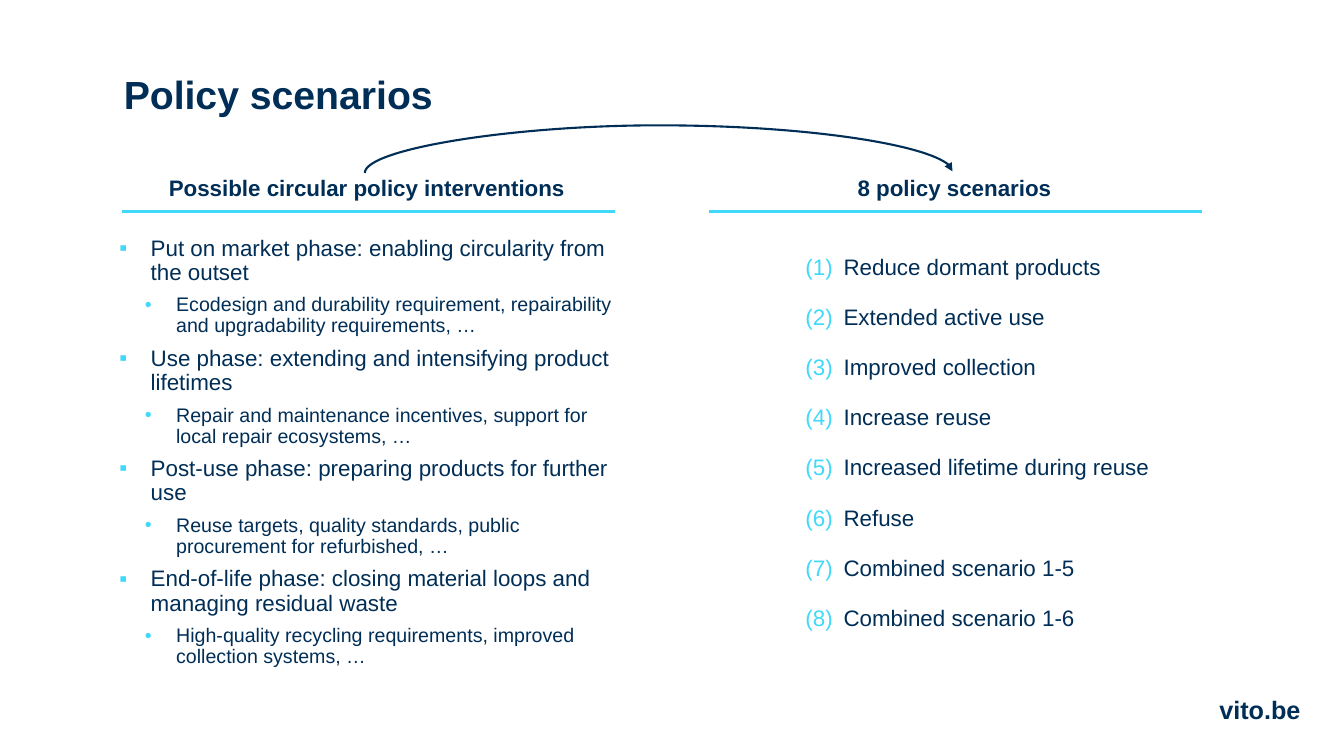
from dataclasses import dataclass

from lxml import etree
from pptx import Presentation
from pptx import util as u
from pptx.dml.color import RGBColor
from pptx.enum import shapes, text
from pptx.oxml.ns import qn


@dataclass(frozen=True)
class Theme:
    font: str = "Arial"
    navy: str = "002E56"
    cyan: str = "41D9F9"
    title: int = 28
    footer: int = 18
    body: int = 16
    detail: int = 14
    rule: float = 1.5
    gap: int = 7
    tight: float = 0.9
    airy: float = 1.5


def add_child(parent, tag, **attributes):
    return etree.SubElement(parent, qn(tag), attributes)


class SlideBuilder:
    def __init__(self, slide, theme):
        self.slide = slide
        self.theme = theme

    def text_box(self, left, top, width, height, anchor=text.MSO_ANCHOR.TOP):
        box = self.slide.shapes.add_textbox(*map(u.Cm, (left, top, width, height)))
        frame = box.text_frame
        frame.word_wrap = True
        frame.vertical_anchor = anchor
        return frame

    def paragraph(self, frame, wording, size, bold=False, spacing=None,
                  centred=False, bullet=None, margin=0, hanging=0):
        """Add one paragraph; bullet is a (tag, attributes) pair."""
        first = not frame.paragraphs[0].runs
        line = frame.paragraphs[0] if first else frame.add_paragraph()
        props = line._p.get_or_add_pPr()
        props.set("marL", str(u.Cm(margin)))
        props.set("indent", str(-u.Cm(hanging)))
        if bullet:
            tag, attributes = bullet
            add_child(add_child(props, "a:buClr"), "a:srgbClr", val=self.theme.cyan)
            add_child(props, "a:buFont", typeface=self.theme.font)
            add_child(props, tag, **attributes)
        line.line_spacing = spacing or self.theme.tight
        if not first:
            line.space_before = u.Pt(self.theme.gap)
        if centred:
            line.alignment = text.PP_ALIGN.CENTER
        run = line.add_run()
        run.text = wording
        run.font.name = self.theme.font
        run.font.size = u.Pt(size)
        run.font.bold = bold
        run.font.color.rgb = RGBColor.from_string(self.theme.navy)

    def label(self, wording, place, size, **style):
        anchor = style.pop("anchor", text.MSO_ANCHOR.TOP)
        self.paragraph(self.text_box(*place, anchor), wording, size, bold=True, **style)

    def line(self, kind, begin, end, colour):
        connector = self.slide.shapes.add_connector(kind, *map(u.Cm, begin + end))
        connector.line.color.rgb = RGBColor.from_string(colour)
        connector.line.width = u.Pt(self.theme.rule)
        add_child(connector._element.spPr, "a:effectLst")
        return connector

    def column_heading(self, wording, left):
        width = 12.62
        self.label(wording, (left, 4.34, width, 1.02), self.theme.body,
                   centred=True, margin=0.13)
        self.line(shapes.MSO_CONNECTOR.STRAIGHT, (left + 0.2, 5.33),
                  (left + width, 5.33), self.theme.cyan)

    def arch_arrow(self, centre_x, centre_y, span, drop, rise):
        """Curve from left to right that bulges upwards: a tall connector turned by 90°."""
        half_w, half_h = drop / 2, span / 2
        arrow = self.line(shapes.MSO_CONNECTOR.CURVE,
                          (centre_x + half_w, centre_y + half_h),
                          (centre_x - half_w, centre_y - half_h), self.theme.navy)
        props = arrow._element.spPr
        props.find(qn("a:xfrm")).set("rot", "5400000")
        geometry = props.find(qn("a:prstGeom"))
        guides = geometry.find(qn("a:avLst"))
        if guides is None:
            guides = add_child(geometry, "a:avLst")
        add_child(guides, "a:gd", name="adj1", fmla=f"val {round(rise / drop * 100000)}")
        add_child(props.find(qn("a:ln")), "a:tailEnd", type="triangle")

    def phases(self, interventions, place):
        frame = self.text_box(*place)
        for phase, measures in interventions:
            self.paragraph(frame, phase, self.theme.body, margin=0.91, hanging=0.79,
                           bullet=("a:buChar", {"char": "▪"}))
            self.paragraph(frame, measures, self.theme.detail, margin=1.55, hanging=0.79,
                           bullet=("a:buChar", {"char": "•"}))

    def numbered(self, scenarios, place):
        frame = self.text_box(*place)
        for scenario in scenarios:
            self.paragraph(frame, scenario, self.theme.body, spacing=self.theme.airy,
                           margin=1.07, hanging=0.96,
                           bullet=("a:buAutoNum", {"type": "arabicParenBoth"}))


INTERVENTIONS = [
    ("Put on market phase: enabling circularity from the outset",
     "Ecodesign and durability requirement, repairability and upgradability requirements, …"),
    ("Use phase: extending and intensifying product lifetimes",
     "Repair and maintenance incentives, support for local repair ecosystems, …"),
    ("Post-use phase: preparing products for further use",
     "Reuse targets, quality standards, public procurement for refurbished, …"),
    ("End-of-life phase: closing material loops and managing residual waste",
     "High-quality recycling requirements, improved collection systems, …"),
]
SCENARIOS = [
    "Reduce dormant products", "Extended active use", "Improved collection",
    "Increase reuse", "Increased lifetime during reuse", "Refuse",
    "Combined scenario 1-5", "Combined scenario 1-6",
]


def main():
    deck = Presentation()
    deck.slide_width, deck.slide_height = u.Cm(33.87), u.Cm(19.05)
    theme = Theme()
    page = SlideBuilder(deck.slides.add_slide(deck.slide_layouts[6]), theme)

    page.label("vito.be", (30.48, 17.37, 3.3, 1.02), theme.footer, spacing=1.0)
    page.label("Policy scenarios", (2.87, 0.66, 23.72, 2.44), theme.title,
               anchor=text.MSO_ANCHOR.BOTTOM)
    page.phases(INTERVENTIONS, (2.64, 5.84, 13.49, 11.23))
    page.numbered(SCENARIOS, (19.94, 5.92, 11.96, 10.67))
    page.column_heading("Possible circular policy interventions", 2.87)
    page.column_heading("8 policy scenarios", 17.68)
    page.arch_arrow(16.6, 4.34, span=14.81, drop=0.04, rise=1.2)
    deck.save("out.pptx")


if __name__ == "__main__":
    main()
